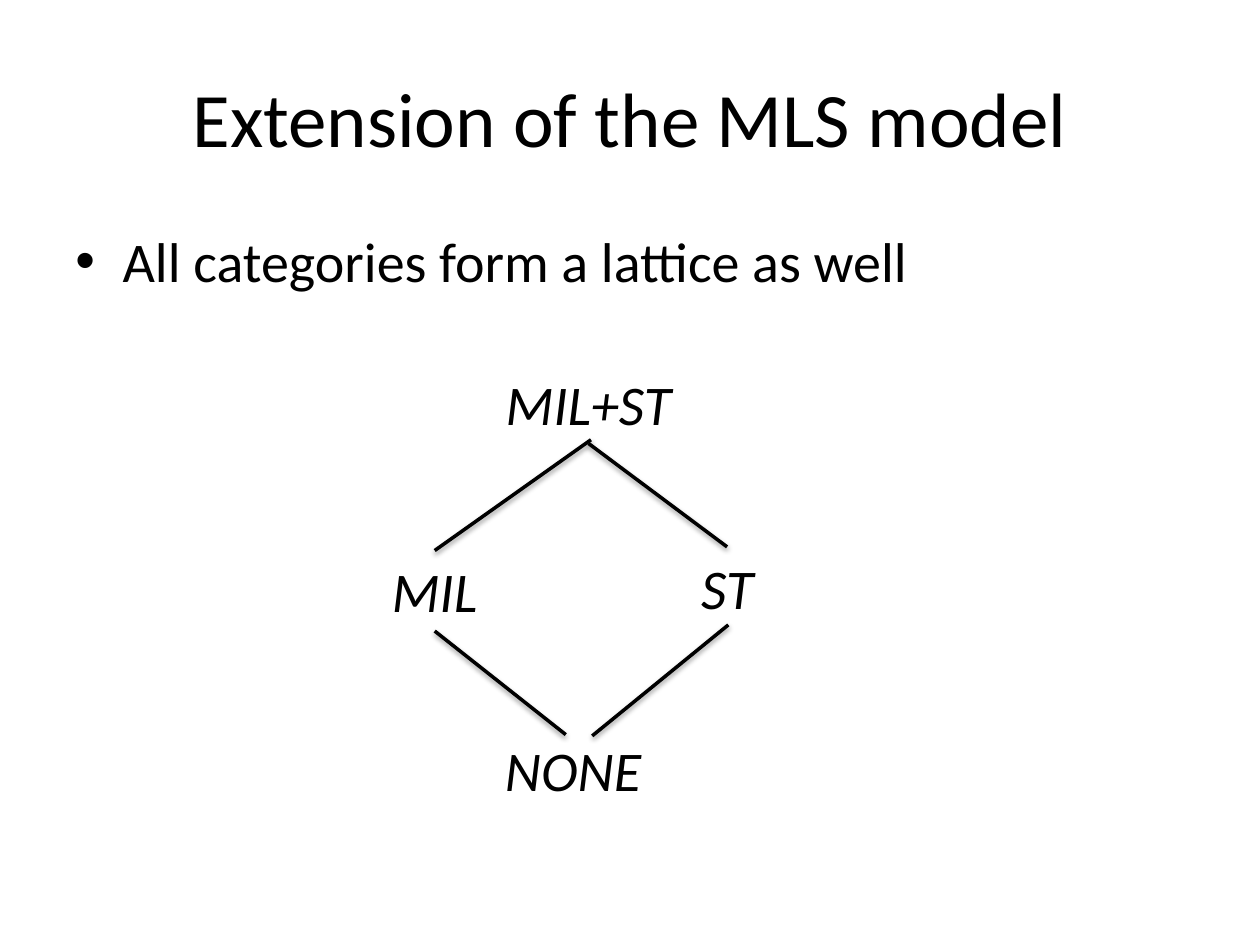
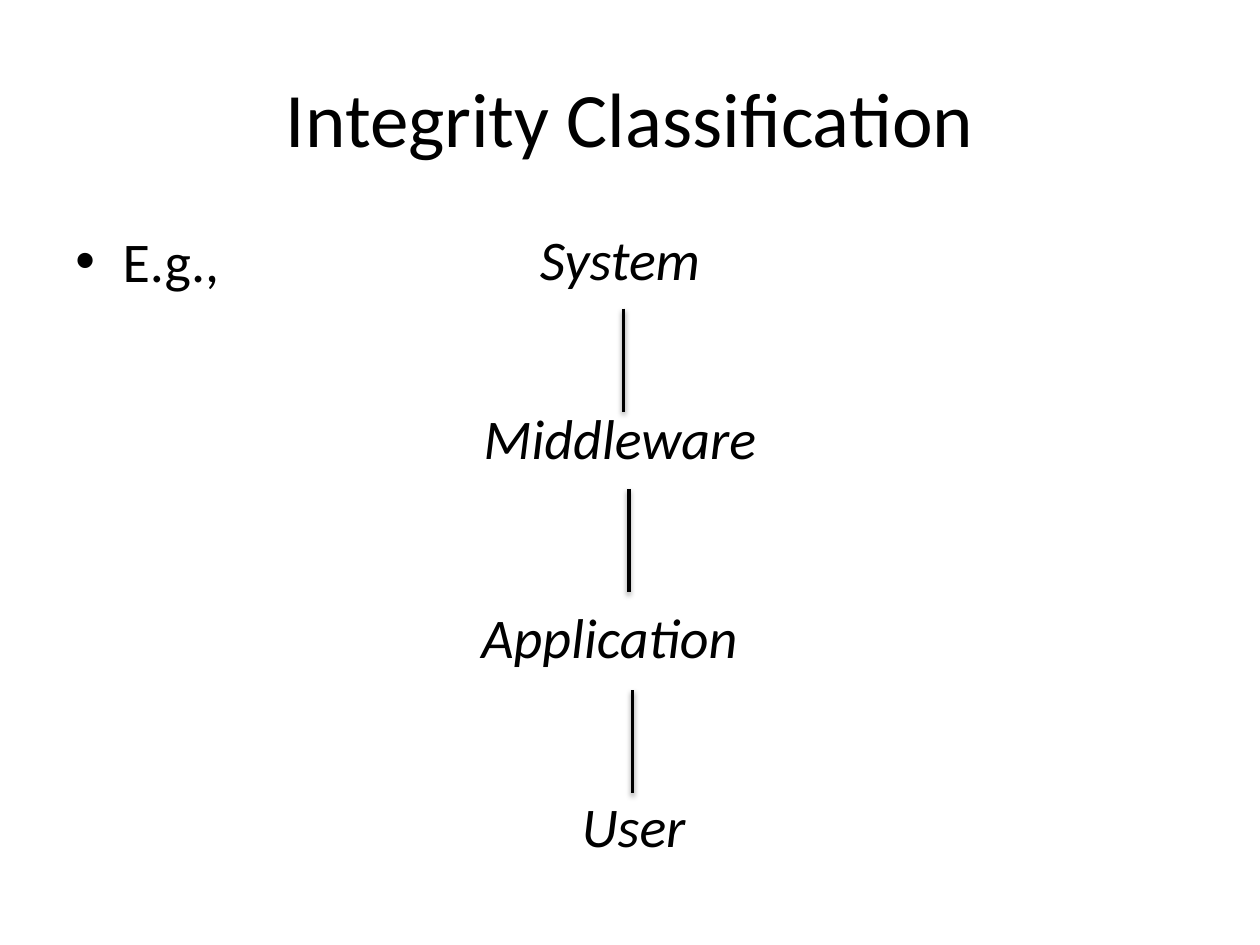
from dataclasses import dataclass

from lxml import etree
from pptx import Presentation
from pptx.dml.color import RGBColor
from pptx.enum.shapes import MSO_CONNECTOR
from pptx.enum.text import MSO_ANCHOR, PP_ALIGN
from pptx.oxml.ns import qn
from pptx.util import Pt

STRAIGHT = MSO_CONNECTOR.STRAIGHT
TOP, MIDDLE = MSO_ANCHOR.TOP, MSO_ANCHOR.MIDDLE
LEFT, CENTER = PP_ALIGN.LEFT, PP_ALIGN.CENTER
SITE_TOP, SITE_BOTTOM = 0, 2

FONT = "Calibri"
BLACK = "000000"
WHITE = "FFFFFF"
LABEL_HEIGHT = 46
BULLET_INDENT = 27


@dataclass(frozen=True)
class Label:
    """A node of a hierarchy; lengths in points."""
    text: str
    left: float
    top: float
    width: float


@dataclass(frozen=True)
class Link:
    """A line between two points, joined to a label where one is named."""
    start: tuple[float, float]
    end: tuple[float, float]
    start_label: str = ""
    end_label: str = ""


@dataclass(frozen=True)
class Page:
    title: str
    bullet: str
    labels: list[Label]
    links: list[Link]


PAGES = [
    Page(
        "Extension of the MLS model",
        "All categories form a lattice as well",
        [
            Label("MIL+ST", 218.2, 207.4, 236.2),
            Label("NONE", 235.4, 416.9, 184.3),
            Label("MIL", 190.8, 314.6, 115.2),
            Label("ST", 373, 312.5, 85),
        ],
        [
            Link((336.2, 253.4), (415.4, 312.5), "MIL+ST", "ST"),
            Link((248.4, 360.7), (323.3, 419.8), "MIL"),
            Link((337.7, 251.3), (248.4, 314.6), end_label="MIL"),
            Link((416.2, 357.1), (338.4, 420.5)),
        ],
    ),
    Page(
        "Integrity Classification",
        "E.g.,",
        [
            Label("System", 236.2, 124.6, 236.2),
            Label("Middleware", 236.2, 226.8, 236.2),
            Label("Application", 256.2, 340.6, 184.3),
            Label("User", 270, 448.6, 184.3),
        ],
        [Link((x, top), (x, top + 59))
         for x, top in [(356.4, 176.4), (359.3, 279.4), (361.4, 394.3)]],
    ),
]


def color(value: str) -> RGBColor:
    return RGBColor.from_string(value)


def add_text(slide, text: str, left: float, top: float, width: float,
             height: float, *, size: float = 32, italic: bool = False,
             align=CENTER, anchor=TOP, bullet: bool = False):
    shape = slide.shapes.add_textbox(Pt(left), Pt(top), Pt(width), Pt(height))
    frame = shape.text_frame
    frame.word_wrap = True
    frame.vertical_anchor = anchor
    paragraph = frame.paragraphs[0]
    paragraph.alignment = align
    run = paragraph.add_run()
    run.text = text
    run.font.name = FONT
    run.font.size = Pt(size)
    run.font.italic = italic
    run.font.color.rgb = color(BLACK)
    if bullet:
        properties = paragraph._p.get_or_add_pPr()
        properties.set("marL", str(Pt(BULLET_INDENT)))
        properties.set("indent", str(-Pt(BULLET_INDENT)))
        etree.SubElement(properties, qn("a:buFont"), typeface="Arial")
        etree.SubElement(properties, qn("a:buChar"), char="•")
    return shape


def add_shadow(connector) -> None:
    effects = etree.SubElement(connector._element.spPr, qn("a:effectLst"))
    shadow = etree.SubElement(
        effects, qn("a:outerShdw"), blurRad=str(Pt(3.1)), dist=str(Pt(1.6)),
        dir="5400000", rotWithShape="0")
    shade = etree.SubElement(shadow, qn("a:srgbClr"), val=BLACK)
    etree.SubElement(shade, qn("a:alpha"), val="38000")


def add_link(slide, link: Link, label_shapes: dict) -> None:
    connector = slide.shapes.add_connector(
        STRAIGHT, *(Pt(value) for value in link.start + link.end))
    connector.line.color.rgb = color(BLACK)
    connector.line.width = Pt(2)
    if link.start_label:
        connector.begin_connect(label_shapes[link.start_label], SITE_BOTTOM)
    if link.end_label:
        connector.end_connect(label_shapes[link.end_label], SITE_TOP)
    add_shadow(connector)


def add_page(presentation, page: Page) -> None:
    slide = presentation.slides.add_slide(presentation.slide_layouts[6])
    slide.background.fill.solid()
    slide.background.fill.fore_color.rgb = color(WHITE)

    # Title and bullet
    add_text(slide, page.title, 36, 21.6, 648, 90, size=44, anchor=MIDDLE)
    add_text(slide, page.bullet, 36, 126, 648, 356.4, align=LEFT, bullet=True)

    # Hierarchy
    label_shapes = {
        label.text: add_text(slide, label.text, label.left, label.top,
                             label.width, LABEL_HEIGHT, italic=True)
        for label in page.labels
    }
    for link in page.links:
        add_link(slide, link, label_shapes)


def main() -> None:
    presentation = Presentation()
    presentation.slide_width = Pt(720)
    presentation.slide_height = Pt(540)
    for page in PAGES:
        add_page(presentation, page)
    presentation.save("out.pptx")


if __name__ == "__main__":
    main()
